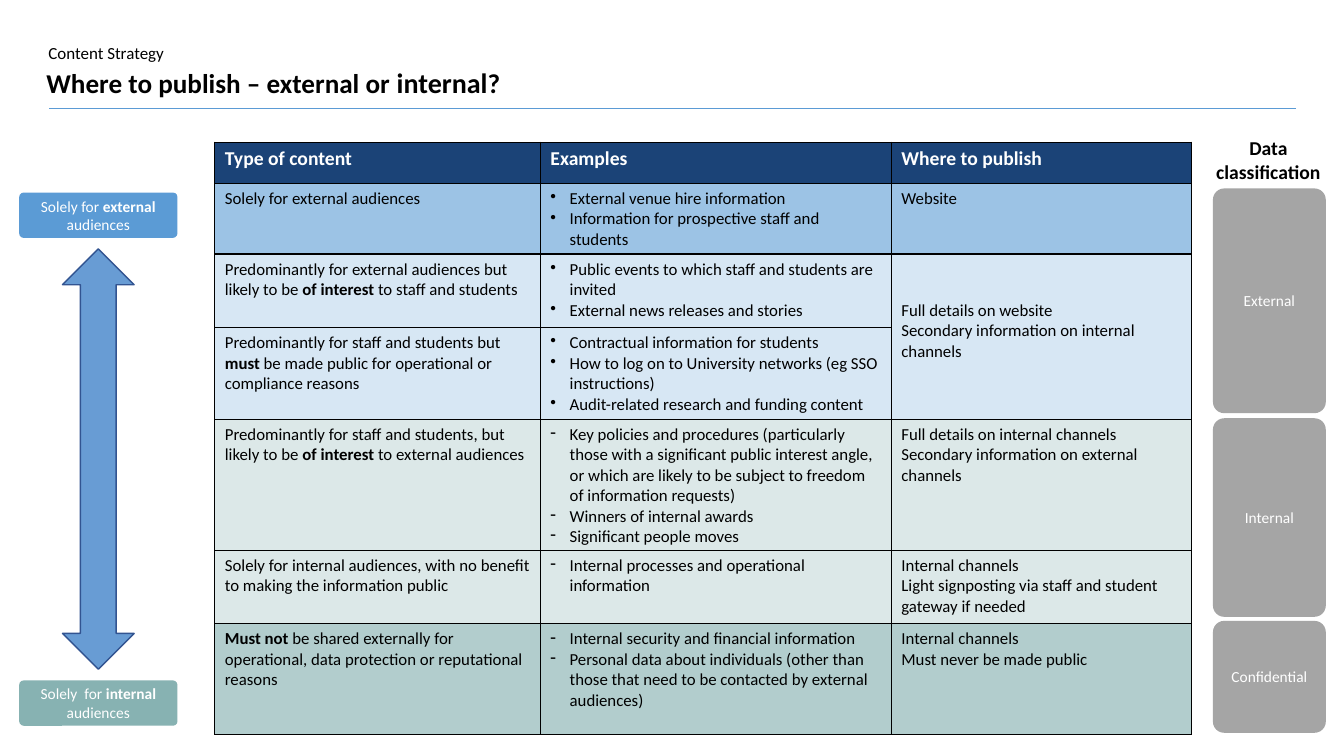
import pptx
import pptx.util
import pptx.dml.color
import pptx.enum.shapes
import pptx.enum.text
import pptx.oxml
import pptx.oxml.ns
from dataclasses import dataclass

Inches, Pt = pptx.util.Inches, pptx.util.Pt
SHAPE = pptx.enum.shapes.MSO_SHAPE
ALIGN = pptx.enum.text.PP_ALIGN
ANCHOR = pptx.enum.text.MSO_ANCHOR
WIDE, HIGH = Inches(13.33), Inches(7.5)


@dataclass(frozen=True)
class Theme:
    face: str = "Calibri"
    black: str = "000000"
    white: str = "FFFFFF"
    navy: str = "1B4377"
    blue: str = "5B9BD5"
    teal: str = "87B2B2"
    grey: str = "A5A5A5"
    arrow: str = "689CD4"
    edge: str = "325491"
    small: float = 11
    body: float = 12
    kicker: float = 12.1
    head: float = 14
    title: float = 19.4
    accent: float = 20


T = Theme()

# Table tracks, as percent of the slide's width and height
COLS = [24.23, 26.11, 22.36]
ROWS = [5.47, 6.8, 9.73, 12.13, 16.67, 9.73, 14.67]

# Fill colour, opacity in percent, bullet sign, then three cells.
# Asterisks mark bold words; each list item is a paragraph.
TABLE = [
    (T.navy, 100, None, ["Type of content"], ["Examples"], ["Where to publish"]),
    (T.blue, 60, "•", ["Solely for external audiences"],
     ["External venue hire information",
      "Information for prospective staff and students"],
     ["Website"]),
    (T.blue, 24, "•",
     ["Predominantly for external audiences but likely to be "
      "*of interest *to staff and students"],
     ["Public events to which staff and students are invited",
      "External news releases and stories"],
     ["Full details on website\nSecondary information on internal channels"]),
    (T.blue, 24, "•",
     ["Predominantly for staff and students but *must *be made public "
      "for operational or compliance reasons"],
     ["Contractual information for students",
      "How to log on to University networks (eg SSO instructions)",
      "Audit-related research and funding content"],
     []),
    (T.teal, 29, "-",
     ["Predominantly for staff and students, but likely to be "
      "*of interest *to external audiences"],
     ["Key policies and procedures (particularly those with a significant "
      "public interest angle, or which are likely to be subject to freedom "
      "of information requests)",
      "Winners of internal awards",
      "Significant people moves"],
     ["Full details on internal channels",
      "Secondary information on external channels"]),
    (T.teal, 29, "-",
     ["Solely for internal audiences, with no benefit to making the "
      "information public"],
     ["Internal processes and operational information"],
     ["Internal channels\nLight signposting via staff and student gateway "
      "if needed"]),
    (T.teal, 64, "-",
     ["*Must not* be shared externally for operational, data protection "
      "or reputational reasons"],
     ["Internal security and financial information",
      "Personal data about individuals (other than those that need to be "
      "contacted by external audiences)"],
     ["Internal channels\nMust never be made public"]),
]


def across(share):
    return int(WIDE * share / 100)


def down(share):
    return int(HIGH * share / 100)


def place(x, y, w, h):
    return across(x), down(y), across(w), down(h)


def rgb(code):
    return pptx.dml.color.RGBColor.from_string(code)


def node(parent, tag, **attrs):
    item = parent.makeelement(pptx.oxml.ns.qn(tag), attrs)
    parent.append(item)
    return item


def write(para, text, size, color, bold=None, align=None):
    """Fill a paragraph; asterisks switch bold, newlines break the line."""
    for spot, part in enumerate(text.split("*")):
        for turn, line in enumerate(part.split("\n")):
            if turn:
                para.add_line_break()
            if line:
                run = para.add_run()
                run.text = line
                if spot % 2:
                    run.font.bold = True
    font = para.font
    font.name, font.size, font.bold = T.face, Pt(size), bold
    font.color.rgb = rgb(color)
    para.alignment = align


def inset(frame, side, top, foot):
    frame.margin_left = frame.margin_right = Inches(side)
    frame.margin_top, frame.margin_bottom = Inches(top), Inches(foot)


def label(slide, spot, text, size, bold=None, align=None):
    frame = slide.shapes.add_textbox(*place(*spot)).text_frame
    frame.word_wrap = True
    write(frame.paragraphs[0], text, size, T.black, bold, align)
    return frame


def shape(slide, kind, spot, fill, edge=None):
    item = slide.shapes.add_shape(kind, *place(*spot))
    item.shadow.inherit = False
    item.fill.solid()
    item.fill.fore_color.rgb = rgb(fill)
    if edge:
        item.line.color.rgb = rgb(edge)
        item.line.width = Pt(1)
    else:
        item.line.fill.background()
    return item


def badge(slide, spot, fill, text):
    item = shape(slide, SHAPE.ROUNDED_RECTANGLE, spot, fill)
    item.adjustments[0] = 0.1
    frame = item.text_frame
    frame.word_wrap = True
    frame.vertical_anchor = ANCHOR.MIDDLE
    inset(frame, 0.05, 0.03, 0.03)
    write(frame.paragraphs[0], text, T.small, T.white, align=ALIGN.CENTER)


def rule(slide, left, right, y):
    line = slide.shapes.add_connector(
        pptx.enum.shapes.MSO_CONNECTOR.STRAIGHT,
        across(left), down(y), across(right), down(y))
    line.line.color.rgb = rgb(T.blue)
    line.line.width = Pt(0.41)
    node(line._element.spPr, "a:effectLst")


def paint(cell, fill, alpha):
    """Give a cell its tint and black borders."""
    cell.fill.solid()
    cell.fill.fore_color.rgb = rgb(fill)
    props = cell._tc.get_or_add_tcPr()
    tint = props.find(".//" + pptx.oxml.ns.qn("a:srgbClr"))
    if alpha < 100:
        node(tint, "a:alpha", val=str(alpha * 1000))
    for index, side in enumerate("LRTB"):
        line = node(props, "a:ln" + side, w=str(Pt(1)))
        node(node(line, "a:solidFill"), "a:srgbClr", val=T.black)
        props.insert(index, line)


def fill_cell(cell, lines, sign, size, color, bold):
    frame = cell.text_frame
    for index, text in enumerate(lines):
        para = frame.add_paragraph() if index else frame.paragraphs[0]
        if sign:
            props = para._p.get_or_add_pPr()
            props.set("marL", str(Inches(0.19)))
            props.set("indent", str(-Inches(0.19)))
            node(props, "a:buChar", char=sign)
        write(para, text, size, color, bold)


def grid(slide, x, y):
    spot = place(x, y, sum(COLS), sum(ROWS))
    table = slide.shapes.add_table(len(ROWS), len(COLS), *spot).table
    table.horz_banding = False
    for col, share in zip(table.columns, COLS):
        col.width = across(share)
    for row, share in zip(table.rows, ROWS):
        row.height = down(share)
    for r, (fill, alpha, sign, *cells) in enumerate(TABLE):
        style = (T.body, T.black, None) if r else (T.head, T.white, True)
        for c, lines in enumerate(cells):
            cell = table.cell(r, c)
            paint(cell, fill, alpha)
            fill_cell(cell, lines, sign if c == 1 else None, *style)
    # One answer serves both mixed-audience rows
    shared = table.cell(2, 2)
    shared.merge(table.cell(3, 2))
    shared.margin_top = Inches(0.46)


def main():
    deck = pptx.Presentation()
    deck.slide_width, deck.slide_height = WIDE, HIGH
    slide = deck.slides.add_slide(deck.slide_layouts[6])

    # Heading
    inset(label(slide, (3.6, 5.33, 27.91, 2.8), "Content Strategy", T.kicker),
          0, 0.02, 0)
    rule(slide, 3.68, 96.4, 14.27)
    title = label(slide, (3.45, 8.4, 83.35, 4.67),
                  "Where to publish – external or *internal*?", T.title, True)
    inset(title, 0, 0.02, 0)
    title.vertical_anchor = ANCHOR.MIDDLE
    title.paragraphs[0].runs[1].font.size = Pt(T.accent)

    # Audience scale
    badge(slide, (1.43, 25.47, 11.78, 6), T.blue, "Solely for *external *audiences")
    grid(slide, 15.98, 18.8)
    badge(slide, (1.43, 90, 11.78, 6), T.teal, "Solely  for *internal* audiences")
    shape(slide, SHAPE.UP_DOWN_ARROW, (4.65, 32.93, 5.33, 55.6), T.arrow, T.edge)

    # Data classes
    for name, top, tall in (("External", 24.93, 29.73),
                            ("Internal", 55.33, 26.27),
                            ("Confidential", 82.13, 14.8)):
        badge(slide, (90.25, top, 8.4, tall), T.grey, name)
    label(slide, (88.45, 17.33, 11.85, 7.6), "Data classification", T.head,
          True, ALIGN.CENTER)

    deck.save("out.pptx")


if __name__ == "__main__":
    main()
